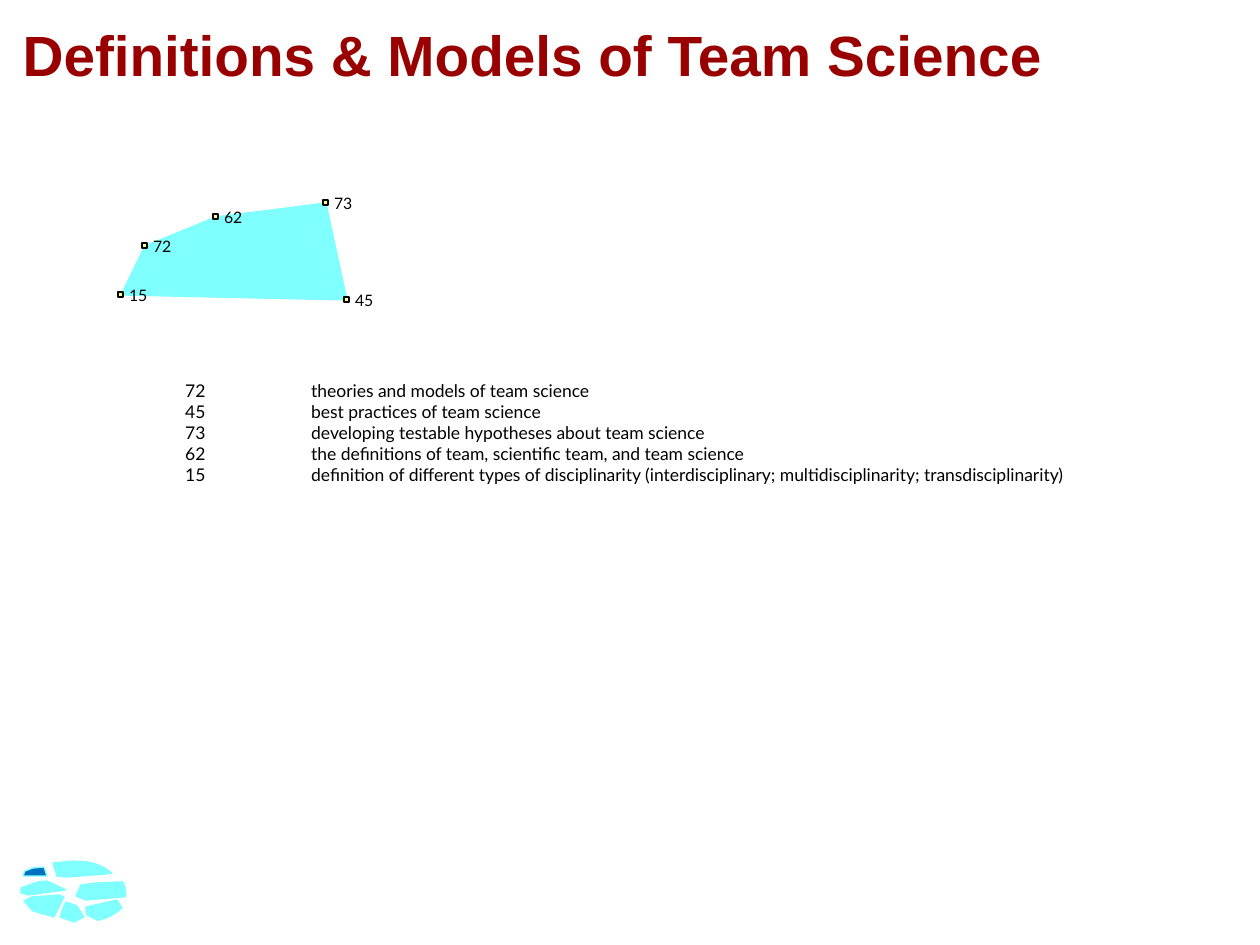
from dataclasses import dataclass

from lxml import etree
from pptx import Presentation
from pptx import util as u
from pptx.dml.color import RGBColor
from pptx.enum import shapes, text
from pptx.oxml import ns

SCALE = u.Inches(1) / 126  # EMU in one px


def px(length):
    return u.Emu(round(length * SCALE))


@dataclass(frozen=True)
class Theme:
    title_font: str = "Arial"
    body_font: str = "Lato"
    title_size: float = 32.4
    list_size: float = 10
    label_size: float = 9
    title_color: str = "990000"
    ink: str = "000000"
    region: str = "80FFFF"
    active: str = "0070C0"
    marker: str = "FFFF80"


class SlideBuilder:
    def __init__(self, slide, theme):
        self.slide = slide
        self.theme = theme

    def place(self, shape, left, top, width, height):
        shape.left, shape.top = px(left), px(top)
        shape.width, shape.height = px(width), px(height)

    def set_font(self, paragraph, name, size, color, bold=False):
        font = paragraph.font
        font.name, font.size, font.bold = name, u.Pt(size), bold
        font.color.rgb = RGBColor.from_string(color)

    def paint(self, shape, fill, line):
        shape.shadow.inherit = False
        shape.fill.solid()
        shape.fill.fore_color.rgb = RGBColor.from_string(fill)
        shape.line.color.rgb = RGBColor.from_string(line)
        shape.line.width = 0

    def title(self, wording, *box):
        shape = self.slide.shapes.title
        self.place(shape, *box)
        frame = shape.text_frame
        frame.text = wording
        frame.vertical_anchor = text.MSO_ANCHOR.MIDDLE
        paragraph = frame.paragraphs[0]
        paragraph.alignment = text.PP_ALIGN.LEFT
        self.set_font(paragraph, self.theme.title_font, self.theme.title_size,
                      self.theme.title_color, bold=True)

    def numbered_topics(self, topics, *box):
        shape = self.slide.placeholders[1]
        self.place(shape, *box)
        frame = shape.text_frame
        frame.text = "\n".join(f"\t{number}\t{topic}" for number, topic in topics)
        frame.auto_size = text.MSO_AUTO_SIZE.SHAPE_TO_FIT_TEXT
        indent = u.Inches(0.37)
        for paragraph in frame.paragraphs:
            properties = paragraph._p.get_or_add_pPr()
            properties.set("marL", str(indent))
            properties.set("indent", str(-indent))
            properties.set("defTabSz", str(u.Inches(1)))
            etree.SubElement(properties, ns.qn("a:buNone"))
            tabs = etree.SubElement(properties, ns.qn("a:tabLst"))
            etree.SubElement(tabs, ns.qn("a:tab"), pos=str(u.Inches(0.25)), algn="r")
            paragraph.space_before = u.Pt(0)
            self.set_font(paragraph, self.theme.body_font, self.theme.list_size,
                          self.theme.ink)

    def polygon(self, points, fill, container=None):
        container = container or self.slide.shapes
        builder = container.build_freeform(*points[0], scale=SCALE)
        builder.add_line_segments(points[1:], close=True)
        self.paint(builder.convert_to_shape(), fill, self.theme.region)

    def marker(self, x, y):
        shape = self.slide.shapes.add_shape(
            shapes.MSO_SHAPE.RECTANGLE, px(x - 3), px(y - 3), px(5), px(5))
        self.paint(shape, self.theme.marker, self.theme.ink)

    def label(self, number, x, y):
        shape = self.slide.shapes.add_textbox(px(x + 4), px(y - 9), px(29), px(21))
        frame = shape.text_frame
        frame.margin_left = frame.margin_right = 0
        frame.margin_top = frame.margin_bottom = 0
        frame.word_wrap = False
        frame.auto_size = text.MSO_AUTO_SIZE.SHAPE_TO_FIT_TEXT
        frame.text = f" {number}"
        self.set_font(frame.paragraphs[0], self.theme.body_font,
                      self.theme.label_size, self.theme.ink)

    def overview_map(self, regions, active):
        group = self.slide.shapes.add_group_shape()
        for index, points in enumerate(regions):
            fill = self.theme.active if index == active else self.theme.region
            self.polygon(points, fill, group.shapes)


TOPICS = [
    (72, "theories and models of team science"),
    (45, "best practices of team science"),
    (73, "developing testable hypotheses about team science"),
    (62, "the definitions of team, scientific team, and team science"),
    (15, "definition of different types of disciplinarity "
         "(interdisciplinary; multidisciplinarity; transdisciplinarity)"),
]

# Statement positions, in order around the cluster
STATEMENTS = {15: (121, 295), 45: (347, 300), 73: (326, 203),
              62: (216, 217), 72: (145, 246)}

# Cluster outlines of the small overview map
REGIONS = [
    [(60, 917), (74, 922), (84, 917), (77, 906), (66, 902), (63, 908)],
    [(86, 912), (87, 915), (97, 920), (100, 920), (111, 916), (117, 912),
     (122, 908), (117, 900), (86, 907)],
    [(23, 876), (47, 876), (44, 867), (33, 868), (25, 871)],
    [(24, 901), (30, 908), (33, 911), (54, 917), (64, 897), (60, 895), (32, 897)],
    [(21, 888), (21, 893), (28, 895), (66, 890), (47, 881), (38, 882)],
    [(53, 863), (57, 876), (67, 877), (106, 874), (112, 873), (105, 868),
     (96, 864), (88, 862), (73, 861)],
    [(76, 896), (86, 900), (122, 897), (126, 896), (125, 888), (123, 882),
     (117, 882), (97, 883), (81, 885)],
]
ACTIVE_REGION = 2


def main():
    presentation = Presentation()
    presentation.slide_width, presentation.slide_height = px(1260), px(945)
    slide = presentation.slides.add_slide(presentation.slide_layouts[1])
    builder = SlideBuilder(slide, Theme())

    # Title and topic list
    builder.title("Definitions & Models of Team Science", 10, 10, 1239, 88)
    builder.numbered_topics(TOPICS, 126, 374, 1008, 118)

    # Cluster with its numbered statements
    builder.polygon(list(STATEMENTS.values()), builder.theme.region)
    for number, point in sorted(STATEMENTS.items()):
        builder.marker(*point)
        builder.label(number, *point)

    # Overview map with the current cluster highlighted
    builder.overview_map(REGIONS, ACTIVE_REGION)

    presentation.save("out.pptx")


if __name__ == "__main__":
    main()
